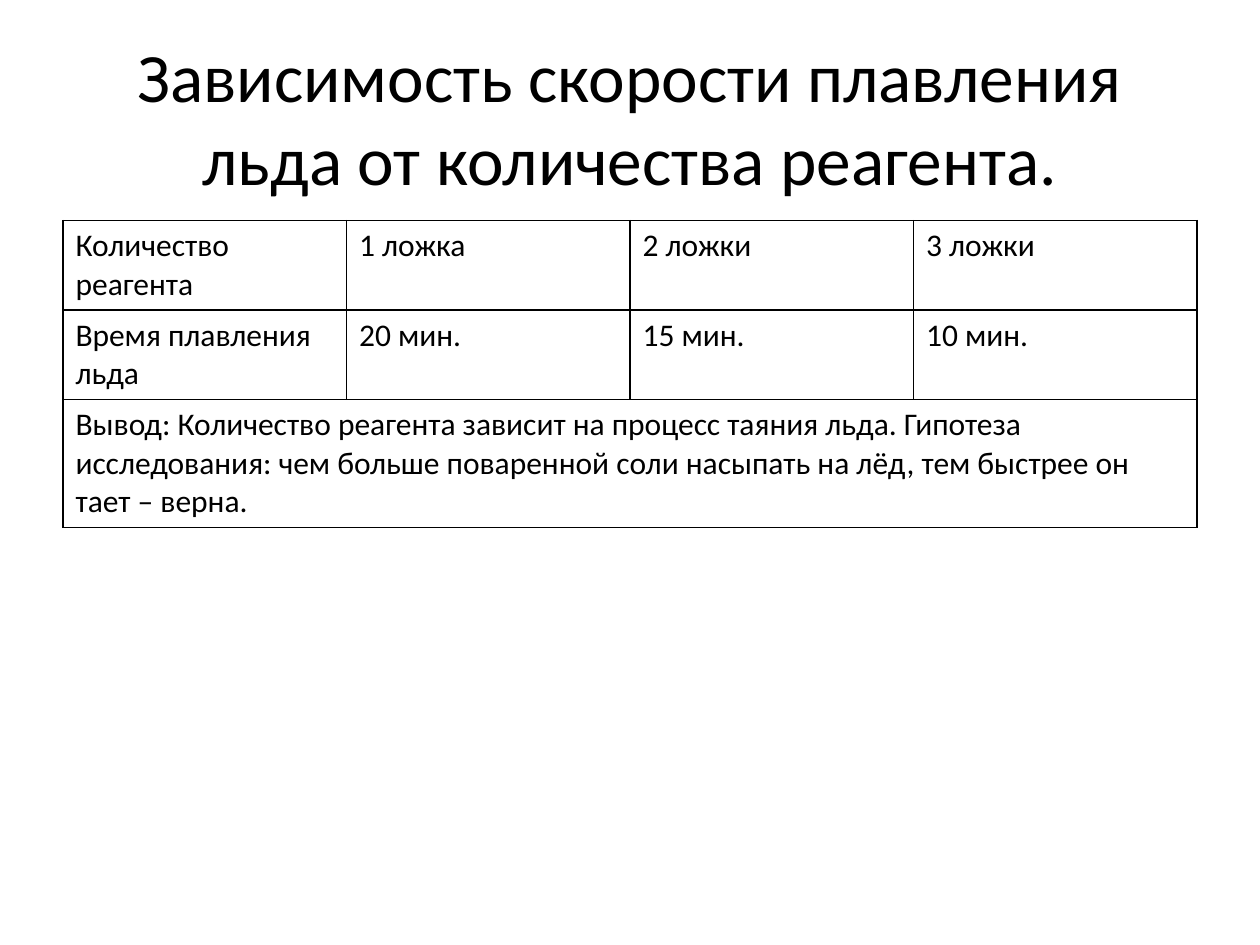
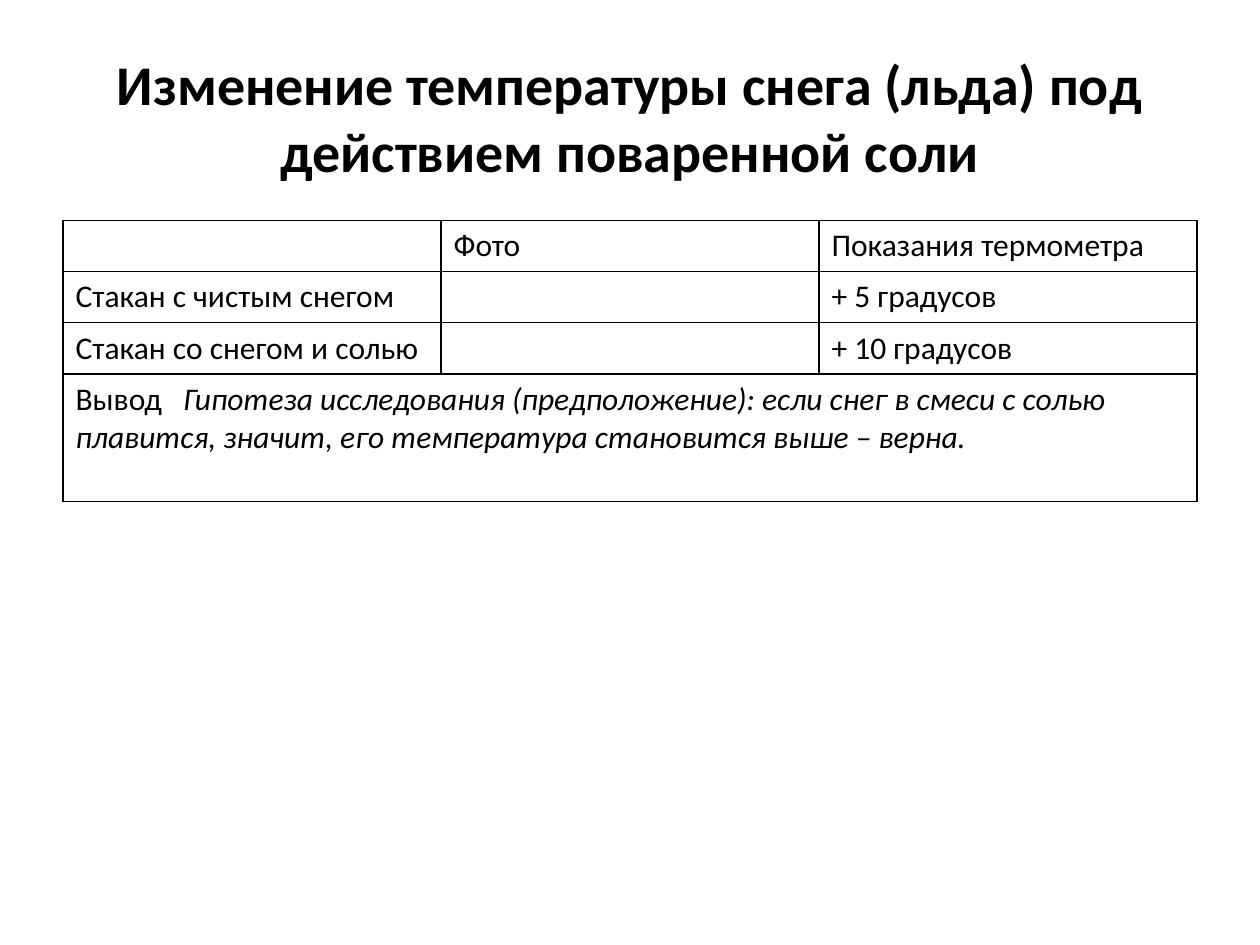
from lxml.etree import SubElement
from pptx import Presentation
from pptx.dml.color import RGBColor
from pptx.enum.text import MSO_ANCHOR, MSO_AUTO_SIZE, PP_ALIGN
from pptx.oxml.ns import qn
from pptx.util import Pt

FONT = "Calibri"
BLACK = "000000"
LEFT, WIDTH = 36, 648
TITLE_TOP, TITLE_HEIGHT = 21.6, 90
TABLE_TOP = 126


def add_text(p, text, size=18, color=BLACK, bold=False, italic=False, spacing=0):
    r = p.add_run()
    r.text = text
    r.font.name = FONT
    r.font.size = Pt(size)
    r.font.bold = bold
    r.font.italic = italic
    r.font.color.rgb = RGBColor.from_string(color)
    if spacing:
        r.font._element.set("spc", str(int(spacing * 100)))


def add_borders(cell, color=BLACK, width=1):
    tc_pr = cell._tc.get_or_add_tcPr()
    for side in ("lnL", "lnR", "lnT", "lnB"):
        ln = SubElement(tc_pr, qn(f"a:{side}"), w=str(Pt(width)))
        fill = SubElement(ln, qn("a:solidFill"))
        SubElement(fill, qn("a:srgbClr"), val=color)


slides = [
    {
        "title": "Зависимость скорости плавления льда от количества реагента.",
        "format": {"size": 39.6},
        "rows": [
            ["Количество реагента", "1 ложка", "2 ложки", "3 ложки"],
            ["Время плавления льда", "20 мин.", "15 мин.", "10 мин."],
        ],
        "row_height": 51.1,
        "conclusion": [
            ("Вывод: Количество реагента зависит на процесс таяния льда. "
             "Гипотеза исследования: чем больше поваренной соли насыпать на лёд, "
             "тем быстрее он тает – верна.", {}),
        ],
    },
    {
        "title": "Изменение температуры снега (льда) под действием поваренной соли",
        "format": {"size": 32, "bold": True},
        "rows": [
            ["", "Фото", "Показания термометра"],
            ["Стакан с чистым снегом", "", "+ 5 градусов"],
            ["Стакан со снегом и солью", "", "+ 10 градусов"],
        ],
        "row_height": 29.2,
        "conclusion": [
            ("Вывод", {}),
            (" ", {"spacing": 8.1}),
            ("Гипотеза исследования (предположение): если снег в смеси с солью "
             "плавится, значит, его температура становится выше – верна.",
             {"italic": True}),
        ],
    },
]
CONCLUSION_HEIGHT = 73

prs = Presentation()
prs.slide_width, prs.slide_height = Pt(720), Pt(540)

for data in slides:
    s = prs.slides.add_slide(prs.slide_layouts[5])
    title = s.shapes.title
    title.left, title.top = Pt(LEFT), Pt(TITLE_TOP)
    title.width, title.height = Pt(WIDTH), Pt(TITLE_HEIGHT)
    tf = title.text_frame
    tf.word_wrap = True
    tf.auto_size = MSO_AUTO_SIZE.NONE
    tf.vertical_anchor = MSO_ANCHOR.MIDDLE
    p = tf.paragraphs[0]
    p.alignment = PP_ALIGN.CENTER
    add_text(p, data["title"], **data["format"])

    rows = data["rows"]
    last, cols = len(rows), len(rows[0])
    height = last * data["row_height"] + CONCLUSION_HEIGHT
    table = s.shapes.add_table(
        last + 1, cols, Pt(LEFT), Pt(TABLE_TOP), Pt(WIDTH), Pt(height)
    ).table
    table.first_row = False
    table.horz_banding = False
    for row in table.rows:
        row.height = Pt(data["row_height"])
    table.rows[last].height = Pt(CONCLUSION_HEIGHT)

    for cell in table.iter_cells():
        add_borders(cell)
        cell.fill.background()
    for i, row in enumerate(rows):
        for j, text in enumerate(row):
            if text:
                add_text(table.cell(i, j).text_frame.paragraphs[0], text)

    conclusion = table.cell(last, 0)
    conclusion.merge(table.cell(last, cols - 1))
    for text, style in data["conclusion"]:
        add_text(conclusion.text_frame.paragraphs[0], text, **style)

prs.save("out.pptx")
